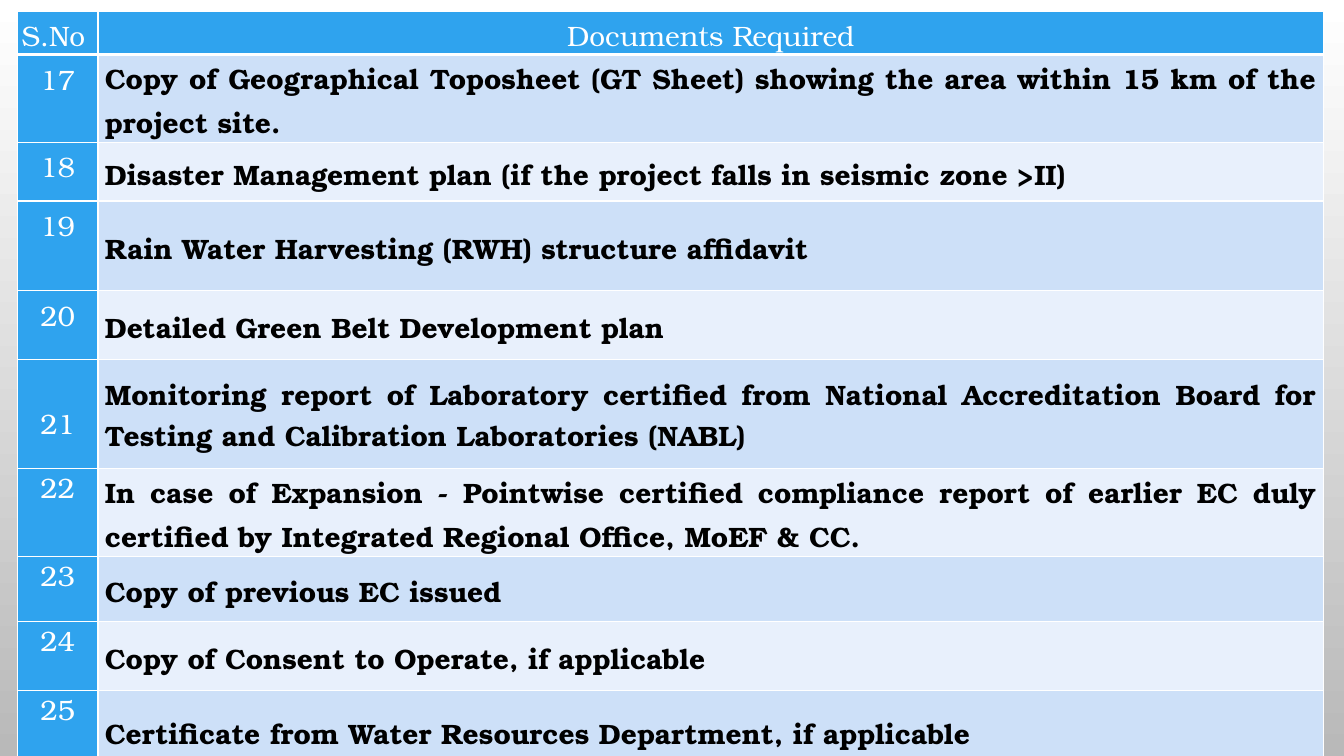
from dataclasses import dataclass
from lxml.etree import SubElement
from pptx import Presentation
from pptx.dml.color import RGBColor as Color
from pptx.enum.text import MSO_ANCHOR as Anchor, PP_ALIGN as Align
from pptx.oxml.ns import qn
from pptx.util import Pt


@dataclass(frozen=True)
class Theme:
    font: str = "TeX Gyre Bonum"
    size: int = 20
    accent: str = "2FA3EE"
    bands: tuple = ("CDE0F8", "E8F0FC")
    light: str = "FFFFFF"
    dark: str = "000000"
    shade: str = "B9B9B9"


THEME = Theme()
COLUMN_WIDTHS = (57.5, 875.5)
HEADER_HEIGHT = 29.5
FIRST_NUMBER = 17
SINGLE_SPACED_FROM = 22
LOWERED_NUMBER = 21

# Row height and required document
DOCUMENTS = [
    (57.5, "Copy of Geographical Toposheet (GT Sheet) showing the area within 15 km of the project site."),
    (42, "Disaster Management plan (if the project falls in seismic zone >II)"),
    (64, "Rain Water Harvesting (RWH) structure affidavit"),
    (49, "Detailed Green Belt Development plan"),
    (78, "Monitoring report of Laboratory certified from National Accreditation Board for "
         "Testing and Calibration Laboratories (NABL)"),
    (58.5, "In case of Expansion - Pointwise certified compliance report of earlier EC duly "
           "certified by Integrated Regional Office, MoEF & CC."),
    (47, "Copy of previous EC issued"),
    (49, "Copy of Consent to Operate, if applicable"),
    (58.5, "Certificate from Water Resources Department, if applicable"),
]


def set_borders(cell, widths):
    """Draw light borders; widths maps the sides L, R, T, B, in that order, to points."""
    properties = cell._tc.get_or_add_tcPr()
    for index, (side, width) in enumerate(widths.items()):
        line = SubElement(properties, qn(f"a:ln{side}"), w=str(Pt(width)))
        fill = SubElement(line, qn("a:solidFill"))
        SubElement(fill, qn("a:srgbClr"), val=THEME.light)
        properties.insert(index, line)


def fill_cell(cell, text, fill, color, align, spacing, side_margin=3,
              top_margin=0, anchor=Anchor.TOP, bold=False):
    cell.fill.solid()
    cell.fill.fore_color.rgb = Color.from_string(fill)
    cell.margin_left = cell.margin_right = Pt(side_margin)
    cell.margin_top, cell.margin_bottom = Pt(top_margin), Pt(0)
    cell.vertical_anchor = anchor
    cell.text_frame.text = text
    para = cell.text_frame.paragraphs[0]
    para.alignment = align
    para.line_spacing = spacing
    font = para.runs[0].font
    font.name, font.size, font.bold = THEME.font, Pt(THEME.size), bold
    font.color.rgb = Color.from_string(color)


def add_header(cells):
    styles = (("S.No", Align.LEFT, Anchor.TOP),
              ("Documents Required", Align.CENTER, Anchor.MIDDLE))
    for cell, (text, align, anchor) in zip(cells, styles):
        fill_cell(cell, text, THEME.accent, THEME.light, align, 1.15, anchor=anchor)
        set_borders(cell, {"L": 1, "R": 1, "T": 1, "B": 3})


def add_document(cells, number, document):
    number_cell, document_cell = cells
    lowered = number == LOWERED_NUMBER
    fill_cell(number_cell, str(number), THEME.accent, THEME.light, Align.CENTER,
              1.0 if number >= SINGLE_SPACED_FROM else 1.15,
              top_margin=28 if lowered else 0)
    fill_cell(document_cell, document, THEME.bands[(number - FIRST_NUMBER) % 2],
              THEME.dark, Align.JUSTIFY, 1.0 if lowered else 1.07,
              side_margin=5, anchor=Anchor.MIDDLE, bold=True)
    for cell in cells:
        set_borders(cell, {"L": 1, "R": 1, "B": 1})


def add_document_table(page, left, top):
    heights = [HEADER_HEIGHT] + [height for height, _ in DOCUMENTS]
    table = page.shapes.add_table(
        len(heights), len(COLUMN_WIDTHS), Pt(left), Pt(top),
        Pt(sum(COLUMN_WIDTHS)), Pt(sum(heights))).table
    table.first_row = table.horz_banding = False
    for column, width in zip(table.columns, COLUMN_WIDTHS):
        column.width = Pt(width)
    for row, height in zip(table.rows, heights):
        row.height = Pt(height)
    rows = [list(row.cells) for row in table.rows]
    add_header(rows[0])
    for number, (cells, (_, document)) in enumerate(zip(rows[1:], DOCUMENTS), FIRST_NUMBER):
        add_document(cells, number, document)


def paint_background(page):
    fill = page.background.fill
    fill.gradient()
    fill.gradient_angle = 270
    for stop, color, position in zip(fill.gradient_stops, (THEME.light, THEME.shade), (0, 1)):
        stop.color.rgb = Color.from_string(color)
        stop.position = position


def main():
    deck = Presentation()
    deck.slide_width, deck.slide_height = Pt(960), Pt(540)
    page = deck.slides.add_slide(deck.slide_layouts[6])
    paint_background(page)
    add_document_table(page, left=12.5, top=8)
    deck.save("out.pptx")


if __name__ == "__main__":
    main()
